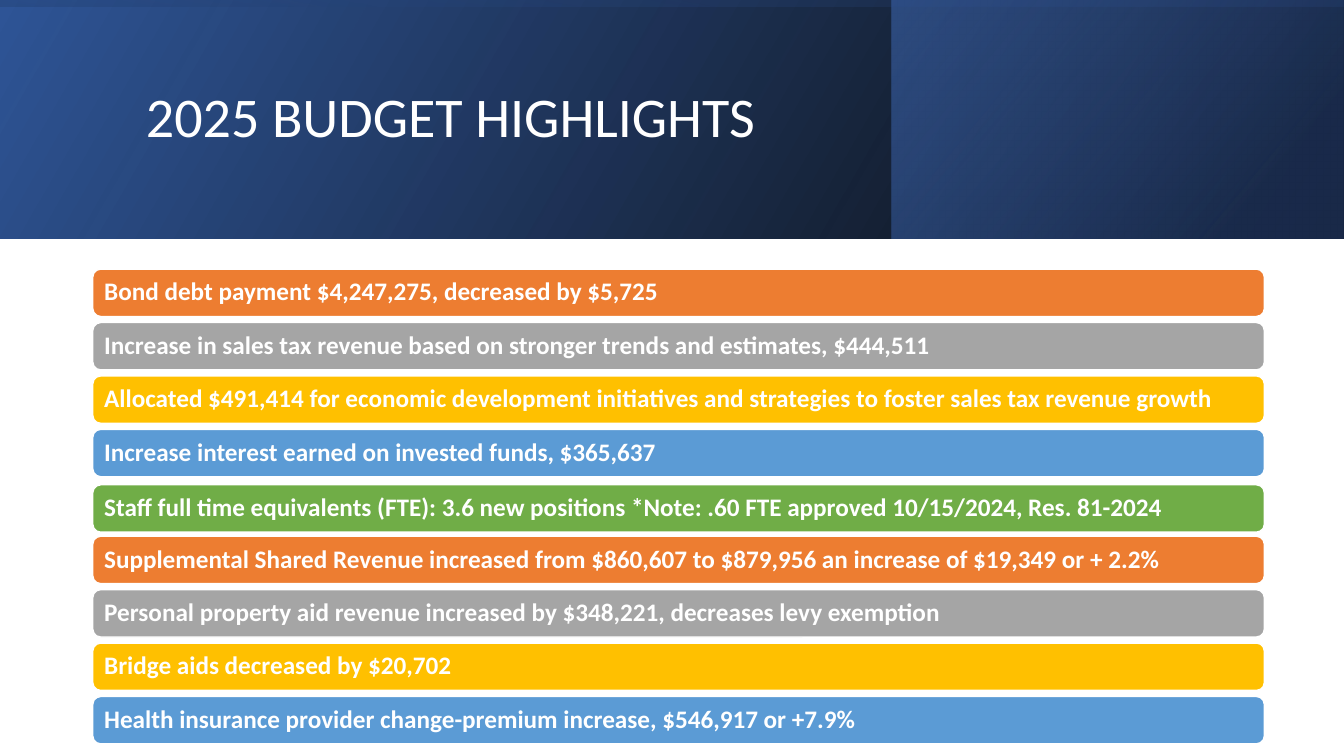
from lxml import etree
from pptx import Presentation
from pptx import util as u
from pptx.dml.color import RGBColor
from pptx.enum import shapes, text
from pptx.oxml import ns

TITLE = "2025 BUDGET HIGHLIGHTS"
ITEMS = [
    "Bond debt payment $4,247,275, decreased by $5,725",
    "Increase in sales tax revenue based on stronger trends and estimates, $444,511",
    "Allocated $491,414 for economic development initiatives and strategies to foster sales tax revenue growth",
    "Increase interest earned on invested funds, $365,637",
    "Staff full time equivalents (FTE): 3.6 new positions *Note: .60 FTE approved 10/15/2024, Res. 81-2024",
    "Supplemental Shared Revenue increased from $860,607 to $879,956 an increase of $19,349 or + 2.2%",
    "Personal property aid revenue increased by $348,221, decreases levy exemption",
    "Bridge aids decreased by $20,702",
    "Health insurance provider change-premium increase, $546,917 or +7.9%",
]
COLORS = {
    "white": "FFFFFF", "black": "000000", "blue": "2F5597",
    "navy": "203864", "royal": "4472C4", "orange": "ED7D31",
    "gray": "A5A5A5", "gold": "FFC000", "sky": "5B9BD5", "green": "70AD47",
}
CYCLE = ["orange", "gray", "gold", "sky", "green"]
BANDS = [
    ((0, 0, 13.33, 2.37), 0, 330, [(0, "black", 96), (100, "blue", 100)]),
    ((8.84, 0, 4.48, 2.37), 0, 320, [(19, "navy", 68), (100, "royal", 48)]),
    ((5.48, -5.48, 2.37, 13.33), 270, 350, [(23, "blue", 16), (99, "black", 45)]),
]
LEFT, TOP, WIDTH, HEIGHT, PITCH = 0.92, 2.67, 11.62, 0.47, 0.53
NUDGE = {4: 0.02}

deck = Presentation()
deck.slide_width, deck.slide_height = u.Inches(13.33), u.Inches(7.5)
slide = deck.slides.add_slide(deck.slide_layouts[6])


def color(name):
    return RGBColor.from_string(COLORS[name])


def place(box):
    return [u.Inches(n) for n in box]


def write(shape, words, size, bold=False, inset=0.1, after=0):
    frame = shape.text_frame
    frame.word_wrap = True
    frame.vertical_anchor = text.MSO_ANCHOR.MIDDLE
    frame.margin_left = frame.margin_right = u.Inches(inset)
    frame.margin_top = frame.margin_bottom = u.Inches(0.05)
    para = frame.paragraphs[0]
    para.alignment = text.PP_ALIGN.LEFT
    para.line_spacing = 0.9
    para.space_after = u.Pt(after)
    run = para.add_run()
    run.text = words
    run.font.name, run.font.size, run.font.bold = "Calibri", u.Pt(size), bold
    run.font.color.rgb = color("white")


def blend(shape, angle, stops):
    props = shape.fill._xPr
    grad = etree.Element(ns.qn("a:gradFill"), rotWithShape="1")
    steps = etree.SubElement(grad, ns.qn("a:gsLst"))
    for pos, name, alpha in stops:
        stop = etree.SubElement(steps, ns.qn("a:gs"), pos=str(pos * 1000))
        tint = etree.SubElement(stop, ns.qn("a:srgbClr"), val=COLORS[name])
        etree.SubElement(tint, ns.qn("a:alpha"), val=str(alpha * 1000))
    etree.SubElement(grad, ns.qn("a:lin"), ang=str(angle * 60000), scaled="0")
    props.find(ns.qn("a:prstGeom")).addnext(grad)
    props.find(ns.qn("a:xfrm")).set("flipH", "1")


for box, turn, angle, stops in BANDS:
    band = slide.shapes.add_shape(shapes.MSO_SHAPE.RECTANGLE, *place(box))
    band.shadow.inherit = False
    band.line.fill.background()
    band.rotation = turn
    blend(band, angle, stops)

title = slide.shapes.add_textbox(*place((1.35, 0.32, 10.63, 1.72)))
write(title, TITLE, 40)

for i, item in enumerate(ITEMS):
    top = TOP + i * PITCH + NUDGE.get(i, 0)
    bar = slide.shapes.add_shape(
        shapes.MSO_SHAPE.ROUNDED_RECTANGLE, *place((LEFT, top, WIDTH, HEIGHT)))
    bar.shadow.inherit = False
    bar.fill.solid()
    bar.fill.fore_color.rgb = color(CYCLE[i % len(CYCLE)])
    bar.line.color.rgb = color("white")
    bar.line.width = u.Pt(1)
    write(bar, item, 18, bold=True, inset=0.09)

deck.save("out.pptx")
